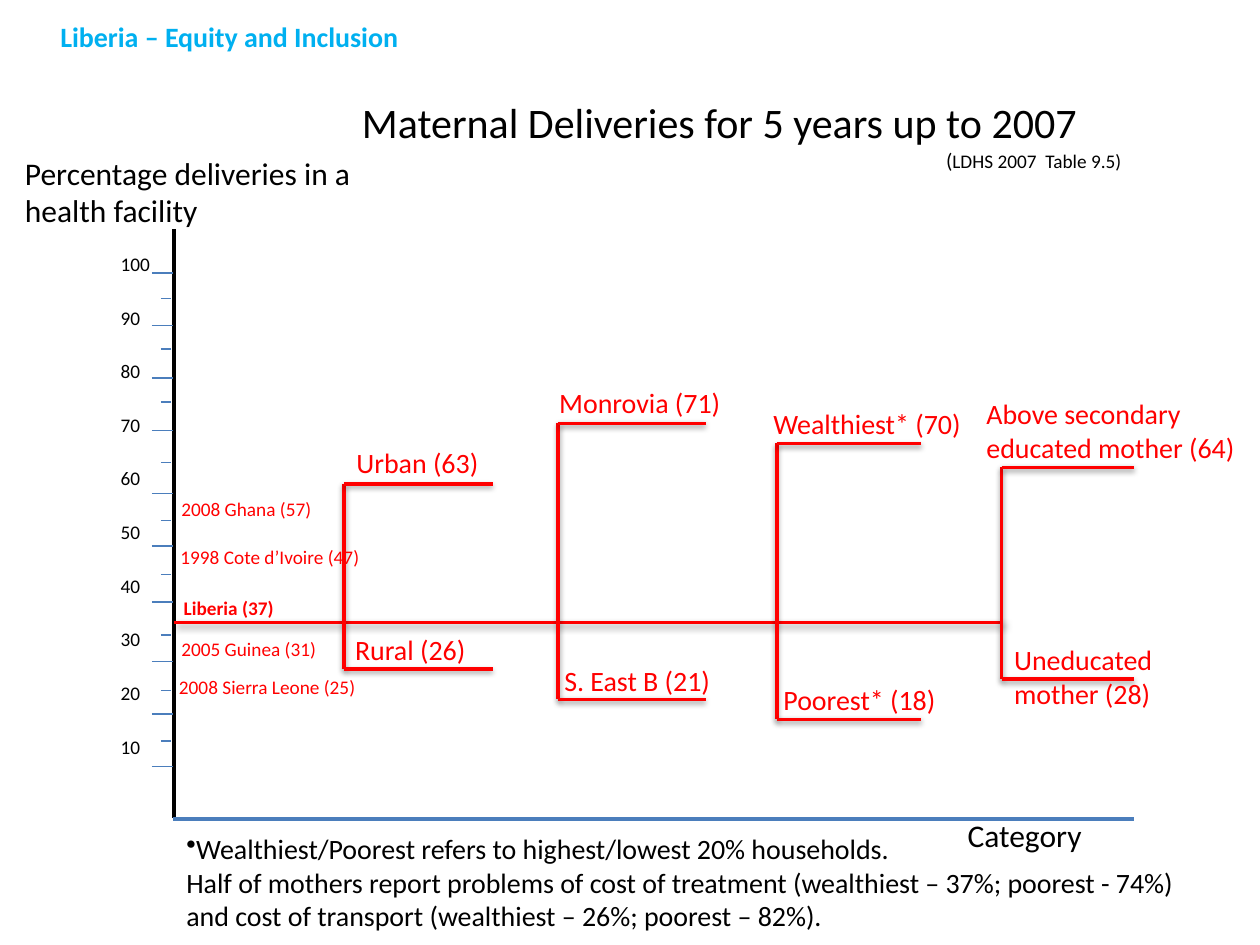
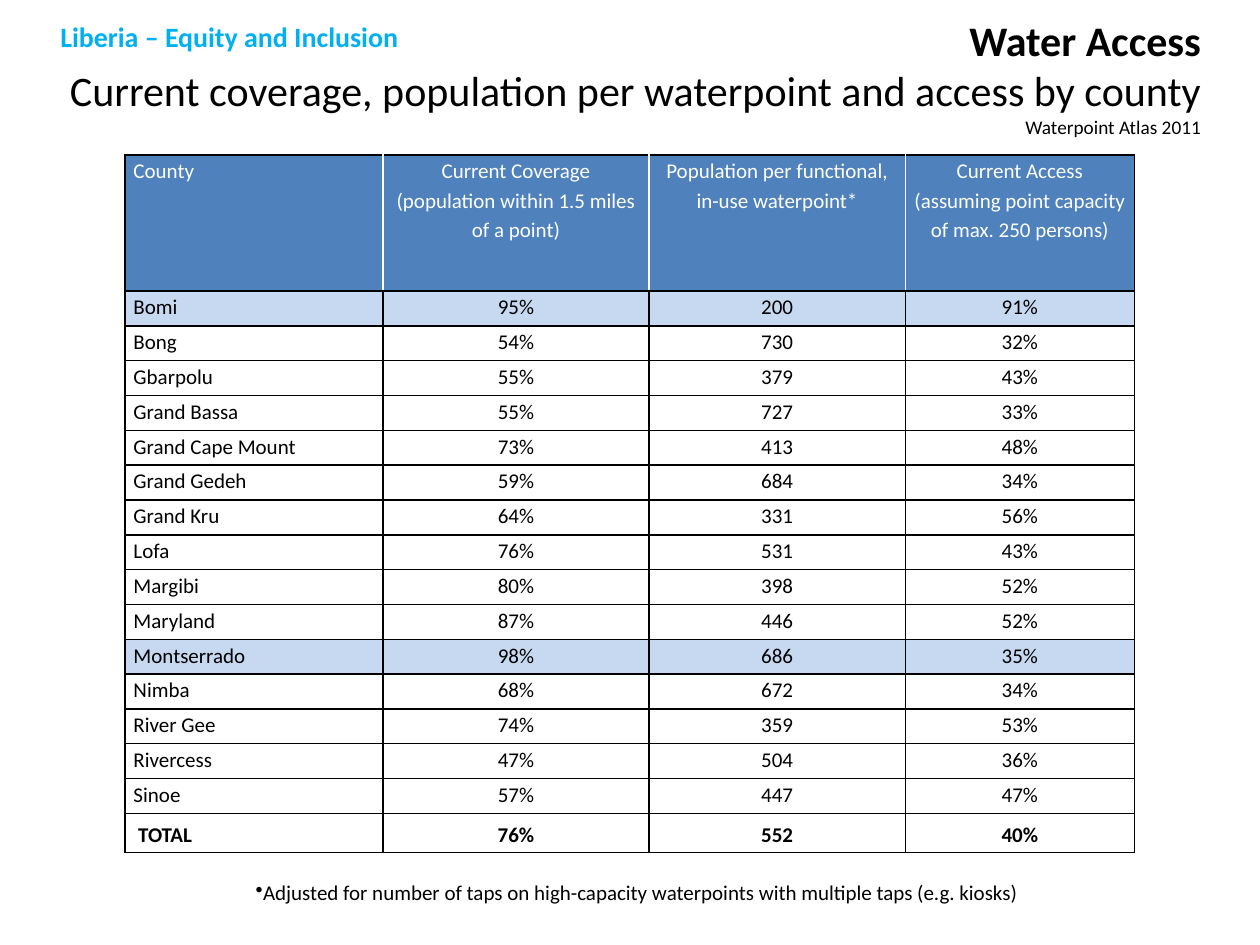
from lxml import etree
from pptx import Presentation
from pptx.dml.color import RGBColor
from pptx.enum import shapes, text
from pptx.oxml import ns
from pptx.util import Pt

BLACK = RGBColor(0x00, 0x00, 0x00)
WHITE = RGBColor(0xFF, 0xFF, 0xFF)
RED = RGBColor(0xFF, 0x00, 0x00)
SKY = RGBColor(0x00, 0xB0, 0xF0)
AXIS_BLUE = RGBColor(0x4B, 0x7E, 0xBC)
HEADER_BLUE = RGBColor(0x4F, 0x81, 0xBD)
PALE_BLUE = RGBColor(0xC6, 0xD9, 0xF1)

LEFT, CENTER, RIGHT = text.PP_ALIGN.LEFT, text.PP_ALIGN.CENTER, text.PP_ALIGN.RIGHT
MIDDLE = text.MSO_ANCHOR.MIDDLE

# Shadows: blur, distance, direction in degrees, opacity in percent
BRACKET_SHADOW = (3.1, 1.6, 90, 38)
AVERAGE_SHADOW = (4, 3, 45, 43)

MAJOR_TICKS = (156, 186, 216, 246, 282, 312, 344, 378, 408, 438)
MINOR_TICKS = (170.6, 199.4, 229.7, 264.2, 297.4, 328.3, 362.9, 394.6, 423.4)

# Left, top, right, bottom of each bracket
BRACKETS = (
    (196.6, 276.5, 281.5, 382.3),
    (319, 241.9, 403.2, 399.6),
    (443.9, 253.4, 526.3, 411.1),
    (572.4, 267.1, 648, 388.1),
)

# Left, top, width, height, lines
GROUP_LABELS = (
    (196.6, 251.3, 85, 26.6, ["Urban (63)"]),
    (195.8, 357.8, 78.5, 26.6, ["Rural (26)"]),
    (312.5, 216.7, 108, 26.6, ["Monrovia (71)"]),
    (315.4, 375.8, 98.6, 26.6, ["S. East B (21)"]),
    (434.9, 229, 123.1, 26.6, ["Wealthiest* (70)"]),
    (440.6, 386.6, 102.2, 26.6, ["Poorest* (18)"]),
    (556.6, 223.2, 158.4, 46.1, ["Above secondary", "educated mother (64)"]),
    (572.4, 363.6, 94.3, 46.1, ["Uneducated", "mother (28)"]),
)
COUNTRY_LABELS = (
    (96.5, 280.8, 90, "2008 Ghana (57)"),
    (96, 308.2, 118.8, "1998 Cote d’Ivoire (47)"),
    (96.5, 360.7, 92.2, "2005 Guinea (31)"),
    (95.2, 382.3, 115.9, "2008 Sierra Leone (25)"),
)

HEADERS = (
    "County",
    "Current Coverage\n(population within 1.5 miles of a point)",
    "Population per functional, in-use waterpoint*",
    "Current Access\n(assuming point capacity of max. 250 persons)",
)
COUNTIES = (
    ("Bomi", "95%", "200", "91%"),
    ("Bong", "54%", "730", "32%"),
    ("Gbarpolu", "55%", "379", "43%"),
    ("Grand Bassa", "55%", "727", "33%"),
    ("Grand Cape Mount", "73%", "413", "48%"),
    ("Grand Gedeh", "59%", "684", "34%"),
    ("Grand Kru", "64%", "331", "56%"),
    ("Lofa", "76%", "531", "43%"),
    ("Margibi", "80%", "398", "52%"),
    ("Maryland", "87%", "446", "52%"),
    ("Montserrado", "98%", "686", "35%"),
    ("Nimba", "68%", "672", "34%"),
    ("River Gee", "74%", "359", "53%"),
    ("Rivercess", "47%", "504", "36%"),
    ("Sinoe", "57%", "447", "47%"),
)
TOTAL = ("TOTAL", "76%", "552", "40%")
HIGHLIGHTED = ("Bomi", "Montserrado")


def add_child(parent, tag, **attributes):
    child = etree.SubElement(parent, ns.qn(tag))
    for name, value in attributes.items():
        child.set(name, str(value))
    return child


class Sheet:
    """Holds the deck's style and the page being drawn."""

    font = "Calibri"

    def __init__(self):
        self.deck = Presentation()
        self.deck.slide_width, self.deck.slide_height = Pt(720), Pt(540)
        self.page = None

    def new_page(self):
        self.page = self.deck.slides.add_slide(self.deck.slide_layouts[6])
        self.text(27.4, 7.9, 223.2, 26.6, ["Liberia – Equity and Inclusion"],
                  16, SKY, bold=True)

    def style(self, span, size, color=BLACK, bold=False):
        span.font.name = self.font
        span.font.size = Pt(size)
        span.font.bold = bold
        span.font.color.rgb = color

    def fill_frame(self, frame, lines, size, color, bold, align):
        frame.text = "\n".join(lines)
        for para in frame.paragraphs:
            para.alignment = align
            for span in para.runs:
                self.style(span, size, color, bold)
        return frame.paragraphs

    def text(self, left, top, width, height, lines, size, color=BLACK,
             bold=False, align=LEFT, wrap=True):
        box = self.page.shapes.add_textbox(Pt(left), Pt(top), Pt(width), Pt(height))
        box.text_frame.word_wrap = wrap
        self.fill_frame(box.text_frame, lines, size, color, bold, align)
        return box.text_frame

    def bullet(self, para):
        add_child(para._p.get_or_add_pPr(), "a:buChar", char="•")

    def line(self, x1, y1, x2, y2, color, width, shadow=None):
        line = self.page.shapes.add_connector(
            shapes.MSO_CONNECTOR.STRAIGHT, Pt(x1), Pt(y1), Pt(x2), Pt(y2))
        line.line.color.rgb = color
        line.line.width = Pt(width)
        effects = add_child(line._element.spPr, "a:effectLst")
        if shadow:
            blur, distance, direction, opacity = shadow
            outer = add_child(effects, "a:outerShdw", blurRad=Pt(blur), dist=Pt(distance),
                              dir=direction * 60000, rotWithShape=0)
            shade = add_child(outer, "a:srgbClr", val=BLACK)
            add_child(shade, "a:alpha", val=opacity * 1000)

    def bracket(self, left, top, right, bottom):
        for ends in ((left, top, left, bottom), (left, top, right, top),
                     (left, bottom, right, bottom)):
            self.line(*ends, RED, 2, BRACKET_SHADOW)

    def borders(self, cell, left=BLACK, right=BLACK):
        properties = cell._tc.get_or_add_tcPr()
        sides = {"a:lnL": left, "a:lnR": right, "a:lnT": BLACK, "a:lnB": BLACK}
        for tag, color in sides.items():
            edge = add_child(properties, tag, w=Pt(1))
            add_child(add_child(edge, "a:solidFill"), "a:srgbClr", val=color)

    def cell(self, cell, content, align, color=BLACK, bold=False, fill=None):
        cell.margin_left = cell.margin_right = Pt(5)
        cell.margin_top = cell.margin_bottom = 0
        for para in self.fill_frame(cell.text_frame, [content], 12, color, bold, align):
            para.line_spacing = 1.15
        if fill is None:
            cell.fill.background()
        else:
            cell.fill.solid()
            cell.fill.fore_color.rgb = fill

    def table(self, left, top, widths, heights):
        frame = self.page.shapes.add_table(
            len(heights), len(widths), Pt(left), Pt(top), Pt(sum(widths)), Pt(sum(heights)))
        table = frame.table
        table.first_row = table.horz_banding = False
        for column, width in zip(table.columns, widths):
            column.width = Pt(width)
        for row, height in zip(table.rows, heights):
            row.height = Pt(height)
        return table


def draw_axes(sheet):
    sheet.line(99.2, 131, 99.2, 467.5, BLACK, 2.25)
    sheet.line(98.6, 468, 648, 468, AXIS_BLUE, 2.25)
    for y in MAJOR_TICKS:
        sheet.line(86.8, y, 99, y, AXIS_BLUE, 0.75)
    for y in MINOR_TICKS:
        sheet.line(92, y, 98, y, AXIS_BLUE, 0.75)
    scale = sheet.text(61.9, 140.6, 50, 298, [str(n) for n in range(100, 0, -10)], 11)
    for para in scale.paragraphs[1:]:
        para.space_before = Pt(17.43)
    sheet.text(545.8, 463, 198, 28.8, ["Category"], 18)
    sheet.text(7.2, 84.2, 203.8, 51.1, ["Percentage deliveries in a health facility"], 18)


def draw_deliveries(sheet):
    sheet.new_page()
    draw_axes(sheet)
    heading = sheet.text(174.2, 51.8, 473.8, 51.1,
                         ["Maternal Deliveries for 5 years up to 2007", "("],
                         24, align=CENTER)
    reference = heading.paragraphs[1]
    reference.alignment = RIGHT
    sheet.style(reference.runs[0], 12)
    span = reference.add_run()
    span.text = "LDHS 2007  Table 9.5)"
    sheet.style(span, 11)

    sheet.line(99.2, 355.7, 572.4, 355.7, RED, 1.5, AVERAGE_SHADOW)
    sheet.text(97.9, 337, 66.2, 20.9, ["Liberia (37)"], 11, RED, bold=True, wrap=False)
    for bracket in BRACKETS:
        sheet.bracket(*bracket)
    for *place, lines in GROUP_LABELS:
        sheet.text(*place, lines, 16, RED, wrap=False)
    for left, top, width, label in COUNTRY_LABELS:
        sheet.text(left, top, width, 20.9, [label], 11, RED, wrap=False)

    notes = sheet.text(99.4, 471.6, 601.2, 65.5, [
        "Wealthiest/Poorest refers to highest/lowest 20% households.",
        "Half of mothers report problems of cost of treatment (wealthiest – 37%; poorest - 74%)",
        "and cost of transport (wealthiest – 26%; poorest – 82%).",
    ], 16, wrap=False)
    sheet.bullet(notes.paragraphs[0])


def draw_water_access(sheet):
    sheet.new_page()
    title = sheet.text(5.8, -1.4, 687.6, 90, [
        "Water Access",
        "Current coverage, population per waterpoint and access by county",
        "Waterpoint Atlas 2011",
    ], 24, align=RIGHT)
    title.vertical_anchor = MIDDLE
    title.paragraphs[0].runs[0].font.bold = True
    title.paragraphs[2].runs[0].font.size = Pt(11)

    heights = [77.7] + [19.92] * len(COUNTIES) + [22.4]
    table = sheet.table(71.3, 88.6, (147.6, 151.9, 146.6, 130.8), heights)
    last = len(HEADERS) - 1
    for r, values in enumerate((HEADERS, *COUNTIES, TOTAL)):
        for c, value in enumerate(values):
            cell = table.cell(r, c)
            align = CENTER if c else LEFT
            if values is HEADERS:
                sheet.borders(cell, WHITE if c else BLACK, WHITE if c < last else BLACK)
                sheet.cell(cell, value, align, WHITE, fill=HEADER_BLUE)
                continue
            sheet.borders(cell)
            fill = PALE_BLUE if values[0] in HIGHLIGHTED else None
            sheet.cell(cell, value, align, bold=values is TOTAL, fill=fill)
            if values is TOTAL:
                cell.vertical_anchor = MIDDLE
    table.cell(len(heights) - 1, 0).margin_left = Pt(7.7)

    note = sheet.text(139, 499, 456.5, 21.6, [
        "Adjusted for number of taps on high-capacity waterpoints with multiple taps (e.g. kiosks)",
    ], 12)
    sheet.bullet(note.paragraphs[0])


def main():
    sheet = Sheet()
    draw_deliveries(sheet)
    draw_water_access(sheet)
    sheet.deck.save("out.pptx")


if __name__ == "__main__":
    main()
